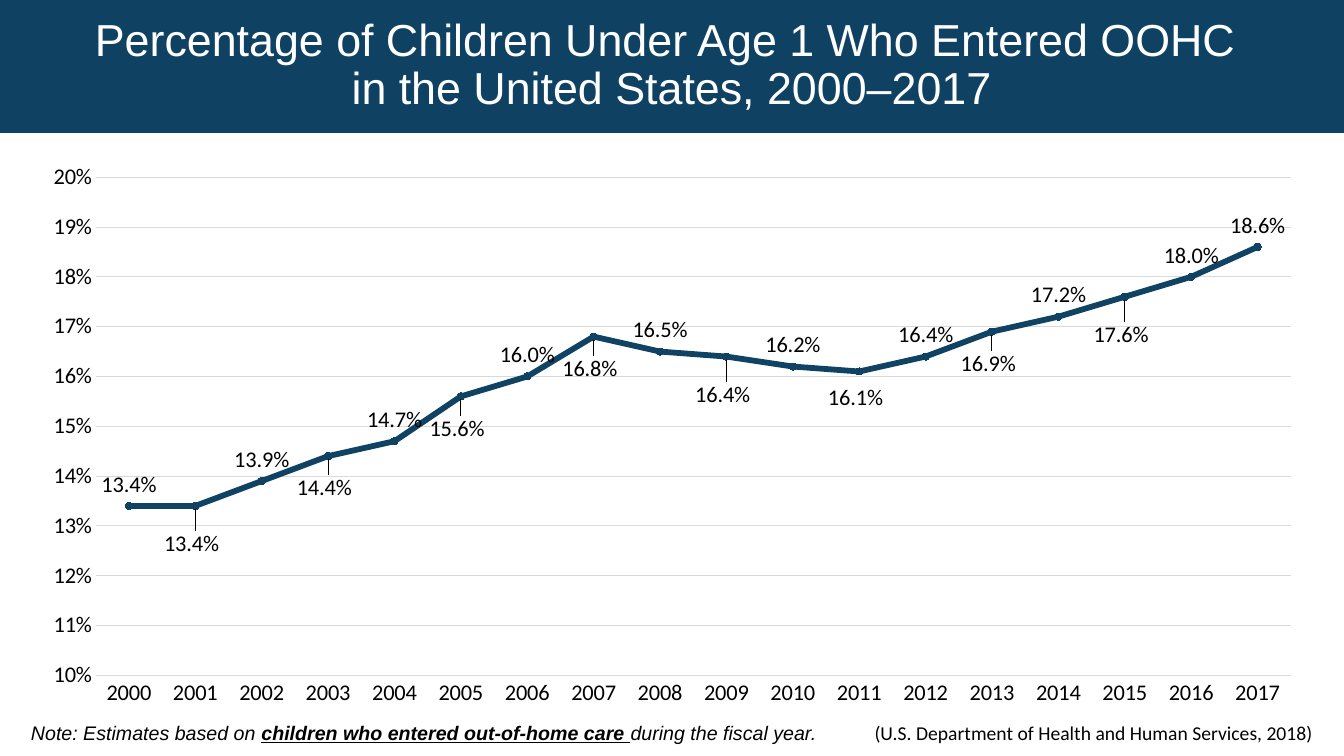
from lxml.etree import SubElement, fromstring
from pptx import Presentation
from pptx.chart.data import CategoryChartData
from pptx.dml.color import RGBColor
from pptx.enum.chart import XL_CHART_TYPE, XL_LABEL_POSITION, XL_MARKER_STYLE, XL_TICK_MARK
from pptx.enum.text import MSO_ANCHOR, MSO_AUTO_SIZE, PP_ALIGN
from pptx.oxml.ns import qn
from pptx.util import Cm, Pt

COLOURS = {"banner": "0F4162", "trend": "0F4263", "grid": "D9D9D9",
           "text": "000000", "title": "FFFFFF"}
RATES = [0.134, 0.134, 0.139, 0.144, 0.147, 0.156, 0.16, 0.168, 0.165,
         0.164, 0.162, 0.161, 0.164, 0.169, 0.172, 0.176, 0.18, 0.186]
LABEL_DROPS = [0.03, 0.02, 0.02, 0.02, 0.03, 0.01, 0.02, 0.03]


def rgb(name):
    return RGBColor.from_string(COLOURS[name])


def manual_layout(**settings):
    """Return a chart layout element with the given settings."""
    layout = fromstring(
        '<c:layout xmlns:c="http://schemas.openxmlformats.org/drawingml/2006/chart"/>')
    manual = SubElement(layout, qn("c:manualLayout"))
    for tag, value in settings.items():
        SubElement(manual, qn(f"c:{tag}")).set("val", str(value))
    return layout


class RateSlide:
    """Holds the style and the current slide."""

    def __init__(self, deck):
        self.slide = deck.slides.add_slide(deck.slide_layouts[5])

    def style(self, font, size, face="Calibri", colour="text"):
        font.name, font.size = face, Pt(size)
        font.color.rgb = rgb(colour)

    def title(self, lines, left, top, width, height):
        banner = self.slide.shapes.title
        banner.left, banner.top, banner.width, banner.height = map(
            Cm, (left, top, width, height))
        banner.fill.solid()
        banner.fill.fore_color.rgb = rgb("banner")
        banner.line.color.rgb = rgb("banner")
        banner.line.width = Pt(1)
        frame = banner.text_frame
        frame.auto_size = MSO_AUTO_SIZE.NONE
        frame.vertical_anchor = MSO_ANCHOR.MIDDLE
        heading = frame.paragraphs[0]
        heading.alignment, heading.line_spacing = PP_ALIGN.CENTER, 0.9
        for number, line in enumerate(lines):
            if number:
                heading.add_line_break()
            run = heading.add_run()
            run.text = line
            self.style(run.font, 32, "Arial", "title")

    def note(self, pieces, left, top, width, height, face, italic=False):
        box = self.slide.shapes.add_textbox(*map(Cm, (left, top, width, height)))
        frame = box.text_frame
        frame.word_wrap = True
        frame.auto_size = MSO_AUTO_SIZE.SHAPE_TO_FIT_TEXT
        for words, strong in pieces:
            run = frame.paragraphs[0].add_run()
            run.text = words
            self.style(run.font, 14, face)
            run.font.italic = italic
            run.font.bold = run.font.underline = strong

    def axis(self, axis):
        axis.major_tick_mark = axis.minor_tick_mark = XL_TICK_MARK.NONE
        self.style(axis.tick_labels.font, 16)

    def line_chart(self, years, rates, left, top, width, height):
        data = CategoryChartData(number_format="0.0%")
        data.categories = years
        data.add_series("Series 1", rates)
        chart = self.slide.shapes.add_chart(
            XL_CHART_TYPE.LINE_MARKERS, *map(Cm, (left, top, width, height)), data).chart
        chart.has_legend = chart.has_title = False
        self.style(chart.font, 10)

        year_axis, rate_axis = chart.category_axis, chart.value_axis
        self.axis(year_axis)
        self.axis(rate_axis)
        rate_axis.minimum_scale, rate_axis.maximum_scale = 0.1, 0.2
        rate_axis.major_unit = 0.01
        rate_axis.tick_labels.number_format = "0%"
        rate_axis.tick_labels.number_format_is_linked = False
        rate_axis.format.line.fill.background()
        for line in (year_axis.format.line, rate_axis.major_gridlines.format.line):
            line.color.rgb = rgb("grid")
            line.width = Pt(0.75)

        plot_area = chart.plots[0]._element.getparent()
        for automatic in plot_area.findall(qn("c:layout")):
            plot_area.remove(automatic)
        plot_area.insert(0, manual_layout(
            layoutTarget="inner", xMode="edge", yMode="edge",
            x=0.053, y=0.044, w=0.927, h=0.881))
        chart.plots[0].vary_by_categories = False
        self.trend(chart.plots[0].series[0])

    def trend(self, series):
        series.smooth = False
        series.format.line.color.rgb = rgb("trend")
        series.format.line.width = Pt(4.15)
        marker = series.marker
        marker.style, marker.size = XL_MARKER_STYLE.CIRCLE, 5
        marker.format.fill.solid()
        marker.format.fill.fore_color.rgb = rgb("trend")
        marker.format.line.color.rgb = rgb("trend")
        labels = series.data_labels
        labels.show_value = True
        labels.number_format, labels.number_format_is_linked = "0.0%", False
        labels.position = XL_LABEL_POSITION.ABOVE
        self.style(labels.font, 16)
        for order, drop in enumerate(LABEL_DROPS):
            label = series.points[2 * order + 1].data_label
            self.style(label.font, 16)
            label.position = XL_LABEL_POSITION.BELOW
            labels._element.findall(qn("c:dLbl"))[order].insert(
                1, manual_layout(x=-0.003, y=drop))


def main():
    deck = Presentation()
    deck.slide_width, deck.slide_height = Cm(33.87), Cm(19.05)
    page = RateSlide(deck)
    page.title(["Percentage of Children Under Age 1 Who Entered OOHC ",
                "in the United States, 2000–2017"], 0, 0, 33.87, 3.33)
    page.line_chart([str(year) for year in range(2000, 2018)], RATES,
                    0.69, 3.84, 32.49, 14.25)
    page.note([("Note: Estimates based on ", False),
               ("children who entered out-of-home care ", True),
               ("during the fiscal year.", False)],
              0.53, 18.03, 20.6, 0.86, "Arial", italic=True)
    page.note([("(U.S. Department of Health and Human Services, 2018)", False)],
              21.79, 18.03, 12, 0.86, "Calibri")
    deck.save("out.pptx")


if __name__ == "__main__":
    main()
